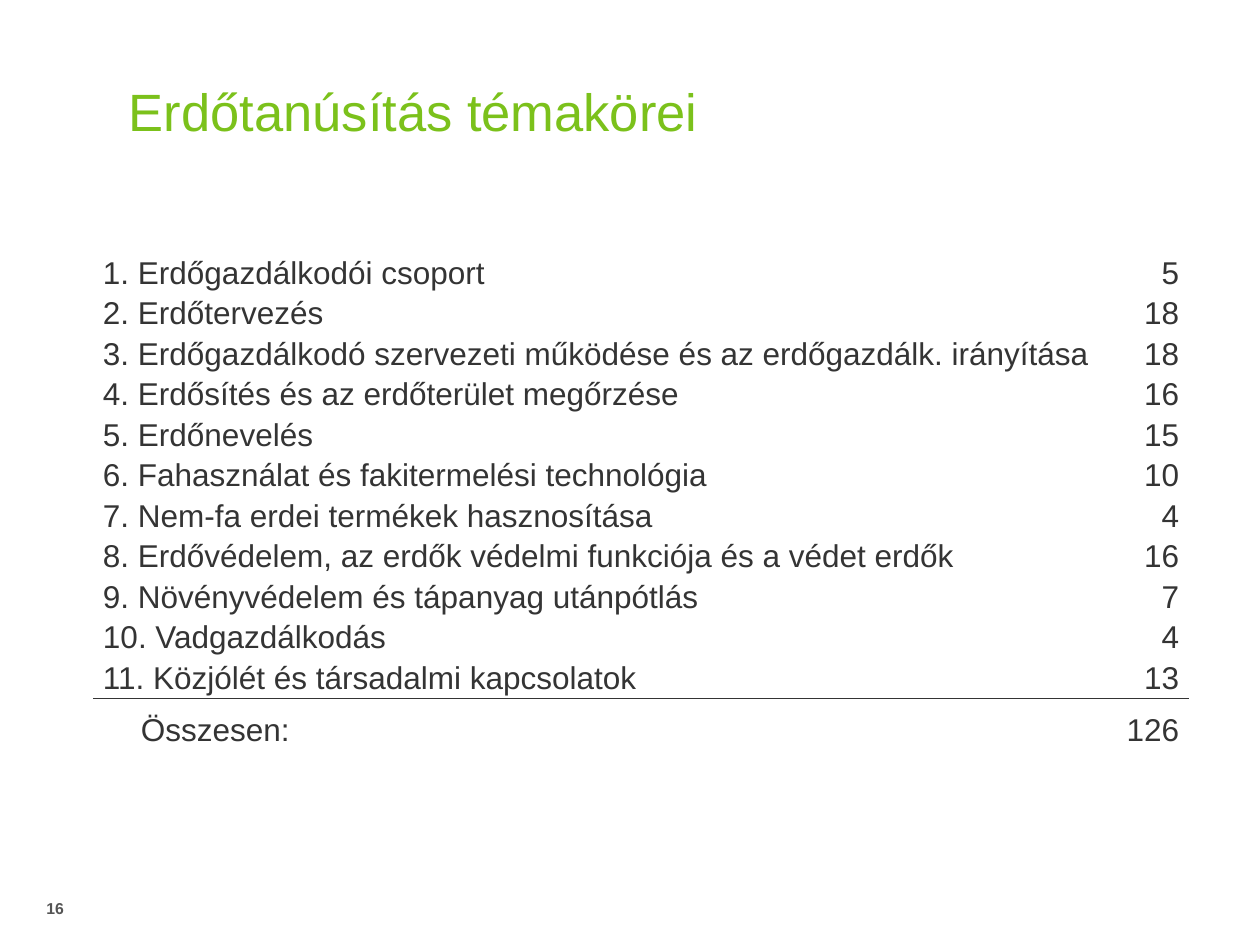
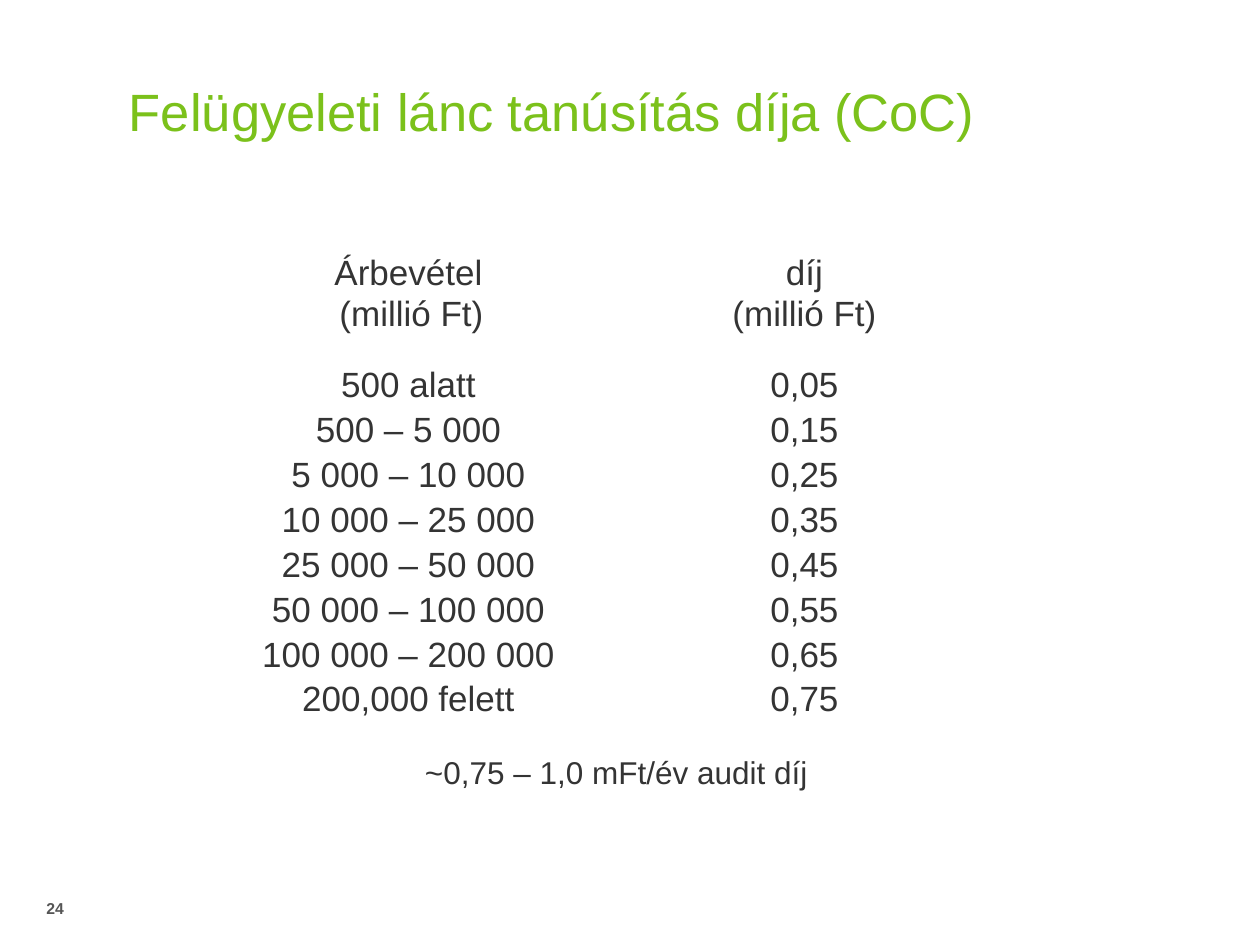
from lxml import etree
from pptx import Presentation
from pptx.dml.color import RGBColor
from pptx.enum import text
from pptx.oxml.ns import qn
from pptx.util import Pt

# Shared look
PX = 914400 / 126
FONT = "Arial"
GREEN, DARK, GREY, WHITE = "7BC11B", "343434", "555555", "FFFFFF"
LEFT, CENTER, RIGHT = (text.PP_ALIGN.LEFT, text.PP_ALIGN.CENTER,
                       text.PP_ALIGN.RIGHT)
TOP, MIDDLE, BOTTOM = (text.MSO_ANCHOR.TOP, text.MSO_ANCHOR.MIDDLE,
                       text.MSO_ANCHOR.BOTTOM)

TOPICS = [
    ("1. Erdőgazdálkodói csoport", "5"),
    ("2. Erdőtervezés", "18"),
    ("3. Erdőgazdálkodó szervezeti működése és az erdőgazdálk. irányítása", "18"),
    ("4. Erdősítés és az erdőterület megőrzése", "16"),
    ("5. Erdőnevelés", "15"),
    ("6. Fahasználat és fakitermelési technológia", "10"),
    ("7. Nem-fa erdei termékek hasznosítása", "4"),
    ("8. Erdővédelem, az erdők védelmi funkciója és a védet erdők", "16"),
    ("9. Növényvédelem és tápanyag utánpótlás", "7"),
    ("10. Vadgazdálkodás", "4"),
    ("11. Közjólét és társadalmi kapcsolatok", "13"),
]
TOTAL = ("Összesen:", "126")

# \v is a line break, \n a new paragraph
FEE_HEADER = ("Árbevétel\v(millió Ft)", "díj\n(millió Ft)")
FEES = [
    ("500 alatt", "0,05"),
    ("500 – 5 000", "0,15"),
    ("5 000 – 10 000", "0,25"),
    ("10 000 – 25 000", "0,35"),
    ("25 000 – 50 000", "0,45"),
    ("50 000 – 100 000", "0,55"),
    ("100 000 – 200 000", "0,65"),
    ("200,000 felett", "0,75"),
]


def px(length):
    return round(length * PX)


def color(value):
    return RGBColor.from_string(value)


def set_all(target, values):
    for name, value in values.items():
        setattr(target, name, value)


def format_text(frame, size, tint, align=LEFT, bold=False, spacing=None):
    for para in frame.paragraphs:
        set_all(para, {"alignment": align, "line_spacing": spacing})
        for span in para.runs:
            set_all(span.font, {"name": FONT, "size": Pt(size), "bold": bold})
            span.font.color.rgb = color(tint)


def indent(cell, margin, first_line=0):
    for para in cell.text_frame.paragraphs:
        properties = para._p.get_or_add_pPr()
        properties.set("marL", str(px(margin)))
        properties.set("indent", str(px(first_line)))


def add_text(page, area, content, size, tint, margins, anchor=TOP, wrap=True,
             **style):
    box = page.shapes.add_textbox(*map(px, area))
    frame = box.text_frame
    sides = ("margin_left", "margin_top", "margin_right", "margin_bottom")
    set_all(frame, dict(zip(sides, map(px, margins))))
    set_all(frame, {"text": content, "word_wrap": wrap,
                    "vertical_anchor": anchor})
    format_text(frame, size, tint, **style)
    return box


def add_page(deck, title, number):
    page = deck.slides.add_slide(deck.slide_layouts[6])
    add_text(page, (129, 0, 900, 142), title, 30, GREEN, (0, 0, 0, 0), BOTTOM)
    add_text(page, (0, 896, 64, 49), number, 9, GREY, (0, 3, 0, 0),
             align=RIGHT, bold=True)
    return page


def set_borders(cell, **tints):
    properties = cell._tc.get_or_add_tcPr()
    for side in "LRTB":
        line = etree.SubElement(properties, qn(f"a:ln{side}"), w=str(Pt(1)))
        fill = etree.SubElement(line, qn("a:solidFill"))
        etree.SubElement(fill, qn("a:srgbClr"), val=tints.get(side, WHITE))


def fill_cell(cell, content, size, align, anchor, margin, fill, borders):
    set_all(cell, {"text": content, "vertical_anchor": anchor,
                   "margin_left": px(margin), "margin_right": px(margin),
                   "margin_top": 0, "margin_bottom": 0})
    format_text(cell.text_frame, size, DARK, align, spacing=1.07)
    set_borders(cell, **borders)
    if fill:
        cell.fill.solid()
        cell.fill.fore_color.rgb = color(fill)
    else:
        cell.fill.background()


def add_grid(page, corner, widths, heights, rows, size, aligns, margin,
             anchors, fill=None, borders=None):
    """Draw a table; heights are EMU, borders maps a row to its side colours."""
    frame = page.shapes.add_table(len(rows), len(widths), *map(px, corner),
                                  px(sum(widths)), sum(heights))
    grid = frame.table
    set_all(grid, {"first_row": False, "horz_banding": False})
    for column, width in zip(grid.columns, widths):
        column.width = px(width)
    for index, (row, height, values) in enumerate(zip(grid.rows, heights, rows)):
        row.height = height
        for cell, value, align in zip(row.cells, values, aligns):
            fill_cell(cell, value, size, align, anchors[index], margin, fill,
                      (borders or {}).get(index, {}))
    return grid


def add_topics(deck):
    page = add_page(deck, "Erdőtanúsítás témakörei", "16")
    rows = [("", ""), *TOPICS, TOTAL]
    last = len(rows) - 1
    grid = add_grid(page, (94, 214), (1012, 82),
                    [px(474) // last] * last + [px(49)], rows, 18,
                    (LEFT, RIGHT), 9, [TOP] * last + [BOTTOM],
                    borders={last - 1: {"B": DARK}, last: {"T": DARK}})
    grid.cell(0, 0).merge(grid.cell(0, 1))
    indent(grid.cell(last, 0), 38)


def add_fees(deck):
    page = add_page(deck, "Felügyeleti lánc tanúsítás díja (CoC)", "24")
    rows = [FEE_HEADER, *FEES]
    heights = [px(137)] + [px(354) // len(FEES)] * len(FEES)
    grid = add_grid(page, (184, 224), (449, 343), heights, rows, 20,
                    (CENTER, CENTER), 6, [MIDDLE] * len(rows), fill=WHITE)
    indent(grid.cell(0, 0), 6, -10)

    # Yearly audit fee below the table
    note = add_text(page, (412, 747, 412, 50), "~0,75 – 1,0 mFt/év audit díj",
                    18, DARK, (13, 6, 13, 6), wrap=False)
    note.text_frame.auto_size = text.MSO_AUTO_SIZE.SHAPE_TO_FIT_TEXT


def main():
    deck = Presentation()
    set_all(deck, {"slide_width": px(1260), "slide_height": px(945)})
    add_topics(deck)
    add_fees(deck)
    deck.save("out.pptx")


if __name__ == "__main__":
    main()
